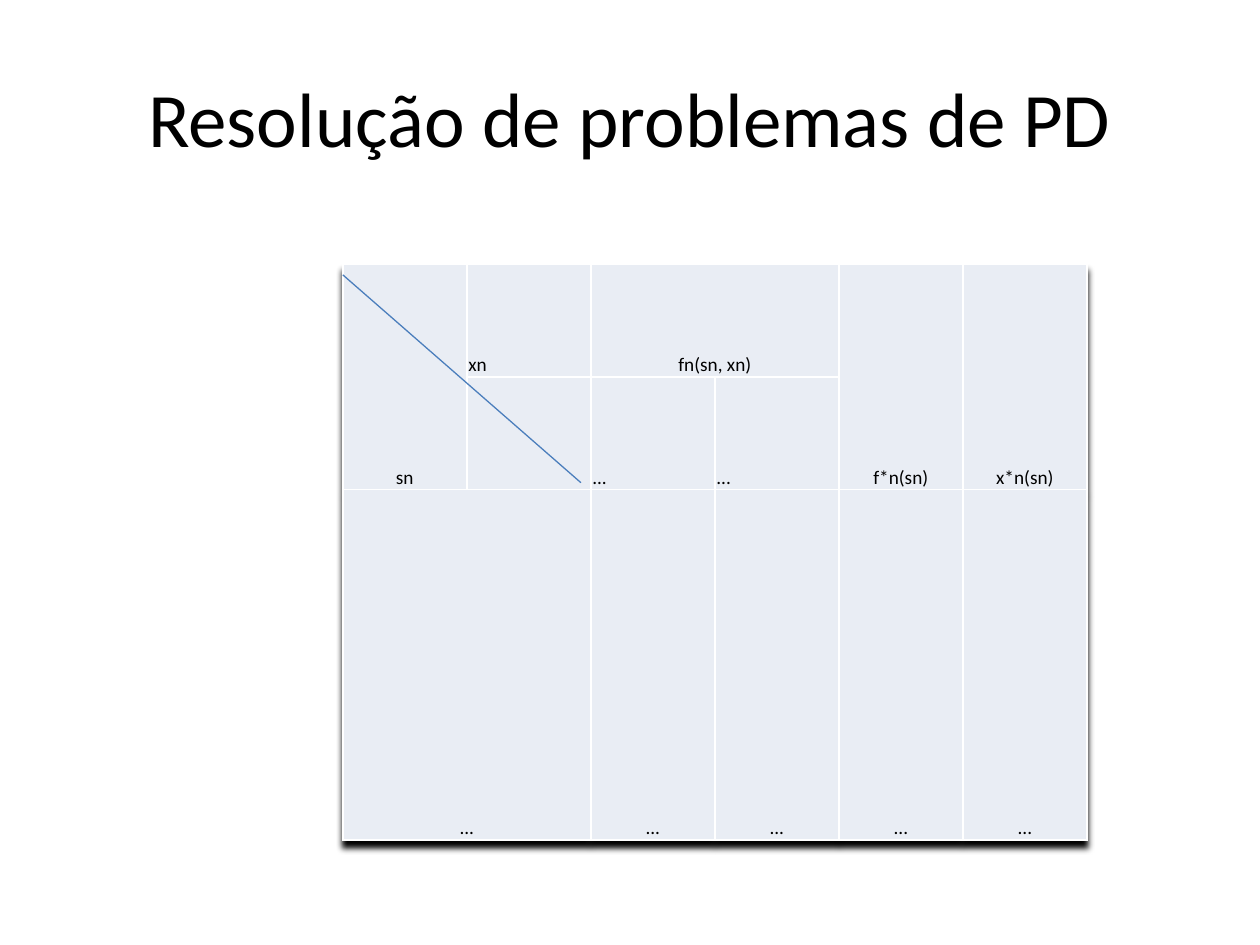
from lxml.etree import SubElement
from pptx import Presentation
from pptx.dml.color import RGBColor
from pptx.enum.shapes import MSO_CONNECTOR
from pptx.enum.text import MSO_ANCHOR, PP_ALIGN
from pptx.oxml import parse_xml
from pptx.oxml.ns import nsdecls, qn
from pptx.util import Cm, Pt

BLACK = RGBColor(0x00, 0x00, 0x00)
WHITE = RGBColor(0xFF, 0xFF, 0xFF)
CELL_FILL = RGBColor(0xE9, 0xED, 0xF4)
DIAGONAL_BLUE = RGBColor(0x4B, 0x7E, 0xBC)


def write_text(paragraph, text, size, alignment):
    paragraph.alignment = alignment
    run = paragraph.add_run()
    run.text = text
    run.font.color.rgb = BLACK
    for name, value in {"name": "Calibri", "size": Pt(size)}.items():
        setattr(run.font, name, value)


def add_borders(cell):
    properties = cell._tc.get_or_add_tcPr()
    for position, side in enumerate(("lnL", "lnR", "lnT", "lnB")):
        border = parse_xml(
            f'<a:{side} {nsdecls("a")} w="{Pt(1)}"><a:solidFill>'
            f'<a:srgbClr val="{WHITE}"/></a:solidFill></a:{side}>'
        )
        properties.insert(position, border)


presentation = Presentation()
presentation.slide_width = Cm(25.4)
presentation.slide_height = Cm(19.05)
slide = presentation.slides.add_slide(presentation.slide_layouts[6])

# Title
title = slide.shapes.add_textbox(Cm(1.27), Cm(0.76), Cm(22.86), Cm(3.18))
title.text_frame.word_wrap = True
title.text_frame.vertical_anchor = MSO_ANCHOR.MIDDLE
write_text(title.text_frame.paragraphs[0], "Resolução de problemas de PD", 44, PP_ALIGN.CENTER)

# Table grid
row_heights = [2.27, 2.27, 7.06]
column_count = 6
table = slide.shapes.add_table(
    len(row_heights), column_count, Cm(6.91), Cm(5.33), Cm(15), Cm(sum(row_heights))
).table
table.first_row = table.horz_banding = False
for row, height in zip(table.rows, row_heights):
    row.height = Cm(height)
for column in table.columns:
    column.width = Cm(2.5)

# Table shadow
table._tbl.tblPr.insert(0, parse_xml(
    f'<a:effectLst {nsdecls("a")}><a:outerShdw blurRad="{Cm(0.12)}" dist="{Cm(0.14)}" '
    f'dir="5400000" rotWithShape="0"><a:srgbClr val="{BLACK}"/></a:outerShdw></a:effectLst>'
))

# Cell formats
cell_format = {
    "vertical_anchor": MSO_ANCHOR.BOTTOM,
    "margin_left": Cm(0.03),
    "margin_right": Cm(0.03),
    "margin_top": Cm(0.03),
    "margin_bottom": Cm(0),
}
for cell in table.iter_cells():
    for name, value in cell_format.items():
        setattr(cell, name, value)
    cell.fill.solid()
    cell.fill.fore_color.rgb = CELL_FILL
    add_borders(cell)

# Merged cells: first and last (row, column)
for first, last in [
    ((0, 0), (1, 0)),
    ((0, 2), (0, 3)),
    ((0, 4), (1, 4)),
    ((0, 5), (1, 5)),
    ((2, 0), (2, 1)),
]:
    table.cell(*first).merge(table.cell(*last))

# Cell texts
left_aligned = {(0, 1), (1, 2), (1, 3)}
cell_texts = [
    ["sn", "xn", "fn(sn, xn)", "", "f*n(sn)", "x*n(sn)"],
    ["", "", "...", "...", "", ""],
    ["...", "", "...", "...", "...", "..."],
]
for row_index, texts in enumerate(cell_texts):
    for column_index, text in enumerate(texts):
        if not text:
            continue
        cell = table.cell(row_index, column_index)
        is_left = (row_index, column_index) in left_aligned
        alignment = PP_ALIGN.LEFT if is_left else PP_ALIGN.CENTER
        write_text(cell.text_frame.paragraphs[0], text, 11, alignment)
        if row_index == 2:
            cell._tc.get_or_add_tcPr().set("vert", "wordArtVert")

# Diagonal between the sn and xn headings
diagonal = slide.shapes.add_connector(
    MSO_CONNECTOR.STRAIGHT, Cm(11.71), Cm(9.73), Cm(6.91), Cm(5.54)
)
diagonal.line.color.rgb = DIAGONAL_BLUE
diagonal.line.width = Pt(0.75)
SubElement(diagonal._element.spPr, qn("a:effectLst"))

presentation.save("out.pptx")
